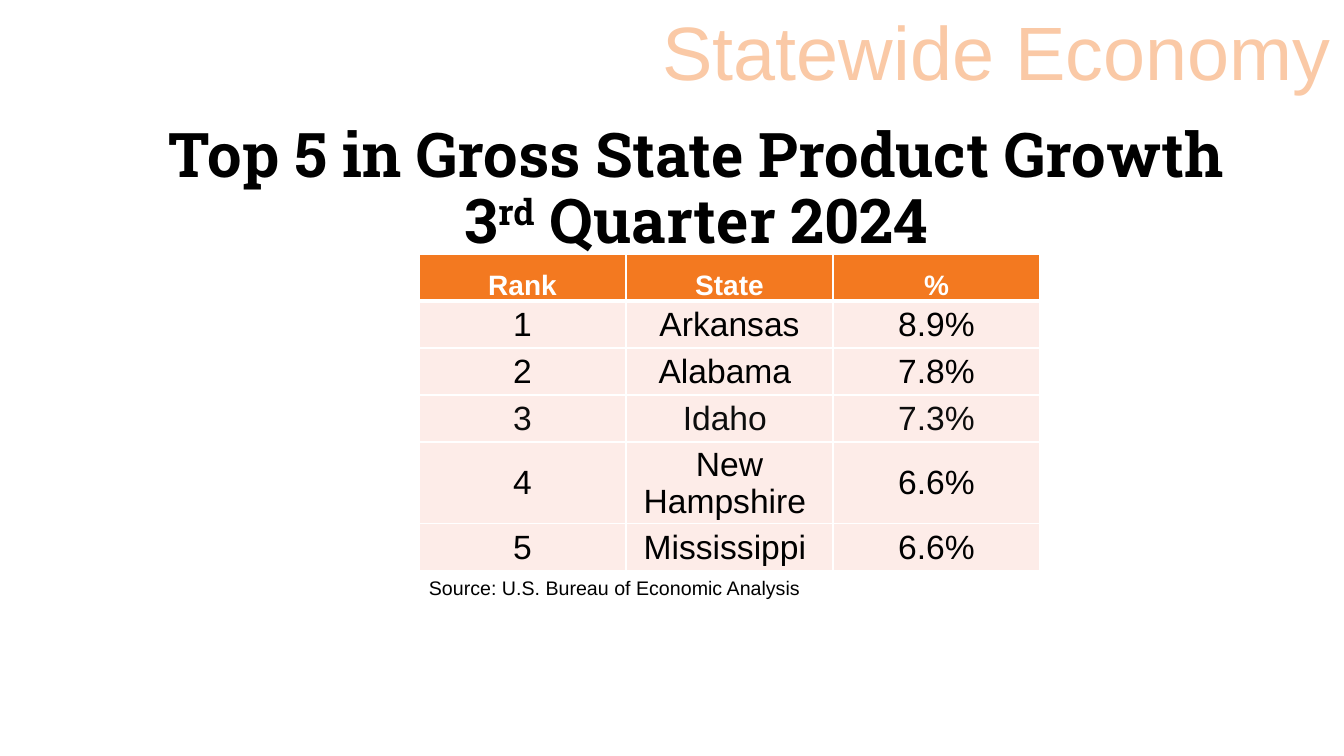
from lxml.etree import SubElement
from pptx import Presentation
from pptx.dml.color import RGBColor
from pptx.enum.text import MSO_ANCHOR, MSO_AUTO_SIZE, PP_ALIGN
from pptx.oxml.ns import qn
from pptx.util import Emu, Pt

WHITE = RGBColor(0xFF, 0xFF, 0xFF)
BLACK = RGBColor(0x00, 0x00, 0x00)
NEAR_BLACK = RGBColor(0x0D, 0x0D, 0x0D)
ORANGE = RGBColor(0xF3, 0x79, 0x20)
PEACH = RGBColor(0xFA, 0xC9, 0xA6)
BLUSH = RGBColor(0xFD, 0xEC, 0xE8)

HEADINGS = ("Rank", "State", "%")
STATES = (
    ("1", "Arkansas", "8.9%"),
    ("2", "Alabama ", "7.8%"),
    ("3", "Idaho ", "7.3%"),
    ("4", "New Hampshire ", "6.6%"),
    ("5", "Mississippi ", "6.6%"),
)


def px(length):
    return Emu(round(length * 914400 / 100.8))


def style_paragraph(para, size, color, name="Arial", bold=False, align=PP_ALIGN.CENTER):
    para.alignment = align
    for span in para.runs:
        span.font.size = Pt(size)
        span.font.name = name
        span.font.bold = bold
        span.font.color.rgb = color


def add_label(page, box, text, size, color, align, wrap):
    label = page.shapes.add_textbox(*map(px, box))
    frame = label.text_frame
    frame.word_wrap = wrap
    frame.auto_size = MSO_AUTO_SIZE.SHAPE_TO_FIT_TEXT
    frame.text = text
    style_paragraph(frame.paragraphs[0], size, color, align=align)


def add_title(page, box):
    frame = page.shapes.add_textbox(*map(px, box)).text_frame
    frame.word_wrap = True
    frame.vertical_anchor = MSO_ANCHOR.TOP
    para = frame.paragraphs[0]
    para.text = "Top 5 in Gross State Product Growth\v3"
    para.line_spacing = 0.9
    ordinal = para.add_run()
    ordinal.text = "rd"
    para.add_run().text = " Quarter 2024"
    style_paragraph(para, 44, BLACK, "Roboto Slab", True)
    ordinal.font._element.set("baseline", "30000")


def add_borders(cell, bottom_width):
    properties = cell._tc.get_or_add_tcPr()
    for side, width in (("L", 1), ("R", 1), ("T", 1), ("B", bottom_width)):
        line = SubElement(properties, qn(f"a:ln{side}"), w=str(Pt(width)))
        fill = SubElement(line, qn("a:solidFill"))
        SubElement(fill, qn("a:srgbClr"), val=str(WHITE))


def fill_cell(cell, text, is_header, color):
    add_borders(cell, 3 if is_header else 1)
    cell.fill.solid()
    cell.fill.fore_color.rgb = ORANGE if is_header else BLUSH
    inset = px(0 if is_header else 1)
    cell.margin_left = cell.margin_right = cell.margin_top = inset
    cell.margin_bottom = 0
    cell.vertical_anchor = MSO_ANCHOR.BOTTOM if is_header else MSO_ANCHOR.MIDDLE
    cell.text_frame.text = text
    style_paragraph(cell.text_frame.paragraphs[0], 20 if is_header else 24, color, bold=is_header)


def add_ranking(page, box):
    rows = (HEADINGS, *STATES)
    left, top, width, row_height = box
    table = page.shapes.add_table(
        len(rows), len(HEADINGS), px(left), px(top), px(width), px(row_height * len(rows))
    ).table
    for row_index, values in enumerate(rows):
        is_header = row_index == 0
        color = WHITE if is_header else NEAR_BLACK if values[0] == "3" else BLACK
        for column_index, text in enumerate(values):
            fill_cell(table.cell(row_index, column_index), text, is_header, color)


def build_economy_page(deck):
    page = deck.slides.add_slide(deck.slide_layouts[6])
    add_title(page, (107, 119, 1180, 91))
    add_ranking(page, (419, 254, 621, 47))
    add_label(page, (649, 0, 695, 102), "Statewide Economy", 54, PEACH, PP_ALIGN.CENTER, False)
    add_label(page, (419, 571, 786, 34), "Source: U.S. Bureau of Economic Analysis",
              14, BLACK, PP_ALIGN.LEFT, True)


def main():
    deck = Presentation()
    deck.slide_width = px(1344)
    deck.slide_height = px(756)
    build_economy_page(deck)
    deck.save("out.pptx")


if __name__ == "__main__":
    main()
